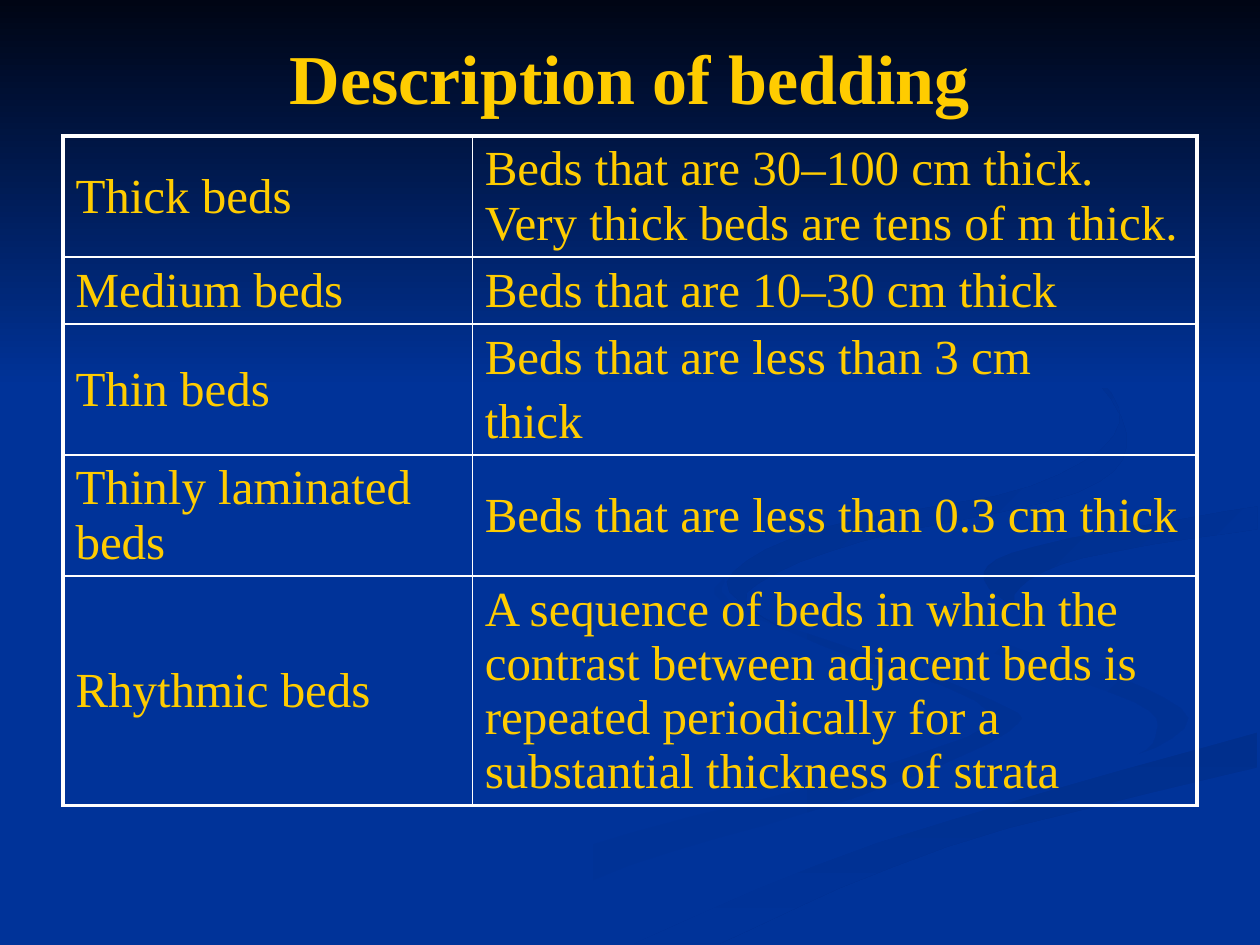
from lxml.etree import SubElement
from pptx import Presentation
from pptx.dml.color import RGBColor
from pptx.enum.shapes import MSO_SHAPE
from pptx.enum.text import MSO_ANCHOR, PP_ALIGN
from pptx.oxml.ns import qn
from pptx.util import Cm, Pt

BLUE = RGBColor(0x00, 0x33, 0x99)
NIGHT = RGBColor(0x00, 0x05, 0x14)
DEEP = RGBColor(0x00, 0x2F, 0x8D)
SHADE = RGBColor(0x00, 0x31, 0x93)
GOLD = RGBColor(0xFF, 0xCC, 0x00)
WHITE = RGBColor(0xFF, 0xFF, 0xFF)
FONT = "Times New Roman"
UNIT = Cm(0.0254)  # grid step of the ribbon edges
STEPS = 5  # line pieces between two points of an edge

# Ribbons, back to front: first colour, last colour, angle, curved edges
RIBBONS = [
    (BLUE, SHADE, 0, [
        [(300, 749), (458, 674), (684, 613), (786, 566), (654, 513),
         (572, 476), (575, 459)],
        [(575, 459), (594, 485), (781, 553), (800, 581), (676, 634),
         (499, 687), (361, 749)]]),
    (BLUE, SHADE, 45, [
        [(724, 464), (755, 505), (900, 557), (917, 585), (894, 605)],
        [(894, 605), (943, 570), (870, 530), (758, 498), (724, 464)]]),
    (DEEP, BLUE, 90, [
        [(503, 749), (696, 669), (998, 581)],
        [(998, 609), (752, 672), (571, 749)]]),
    (BLUE, BLUE, 0, [
        [(477, 749), (704, 655), (936, 587), (931, 553), (793, 509),
         (725, 464), (770, 427), (999, 387)],
        [(999, 402), (835, 430), (784, 469), (848, 503), (999, 538)],
        [(999, 581), (696, 669), (503, 749)]]),
    (DEEP, BLUE, 45, [
        [(998, 402), (821, 434), (781, 460), (826, 496)],
        [(826, 496), (805, 472), (859, 443), (998, 420)]]),
    (DEEP, BLUE, 45, [
        [(762, 233), (846, 279), (889, 335), (818, 386), (649, 420),
         (577, 462), (622, 500)],
        [(622, 500), (593, 470), (683, 430), (855, 391), (894, 344),
         (843, 275), (762, 233)]]),
]

ROWS = [  # height in cm, term, paragraphs of the description
    (2.44, "Thick beds",
     ["Beds that are 30–100 cm thick. Very thick beds are tens of m thick."]),
    (1.35, "Medium beds", ["Beds that are 10–30 cm thick"]),
    (2.64, "Thin beds", ["Beds that are less than 3 cm", "thick"]),
    (2.44, "Thinly laminated beds", ["Beds that are less than 0.3 cm thick"]),
    (4.62, "Rhythmic beds",
     ["A sequence of beds in which the contrast between adjacent beds is "
      "repeated periodically for a substantial thickness of strata"]),
]


def smooth(edge):
    """Points of a Catmull-Rom curve through the points of an edge."""
    knots = [edge[0], *edge, edge[-1]]
    curve = []
    for quad in zip(knots, knots[1:], knots[2:], knots[3:]):
        for step in range(STEPS):
            t = step / STEPS
            curve.append(tuple(
                b + t * (c - a + t * (2 * a - 5 * b + 4 * c - d
                                      + t * (3 * b - a - 3 * c + d))) / 2
                for a, b, c, d in zip(*quad)))
    return curve + [edge[-1]]


def format_font(font, size, bold=False):
    values = {"name": FONT, "size": Pt(size), "bold": bold}
    for name, value in values.items():
        setattr(font, name, value)
    font.color.rgb = GOLD


def paint(sp, first, last, angle):
    sp.shadow.inherit = False
    sp.line.fill.background()
    if first == last:
        sp.fill.solid()
        sp.fill.fore_color.rgb = first
        return
    sp.fill.gradient()
    sp.fill.gradient_angle = -angle % 360
    for stop, color in zip(sp.fill.gradient_stops, (first, last)):
        stop.color.rgb = color


def add_backdrop(s, left, top, width, height):
    s.background.fill.solid()
    s.background.fill.fore_color.rgb = BLUE
    # Swirling ribbons
    for first, last, angle, edges in RIBBONS:
        points = [point for edge in edges for point in smooth(edge)]
        builder = s.shapes.build_freeform(*points[0], scale=UNIT)
        builder.add_line_segments(points[1:], close=True)
        paint(builder.convert_to_shape(left, top), first, last, angle)
    # Dark fade at the top
    fade = s.shapes.add_shape(MSO_SHAPE.RECTANGLE, left, top, width, height)
    paint(fade, NIGHT, BLUE, 90)


def add_title(s, left, top, width, height):
    sp = s.shapes.title
    box = {"left": left, "top": top, "width": width, "height": height}
    for name, value in box.items():
        setattr(sp, name, value)
    tf = sp.text_frame
    tf.vertical_anchor = MSO_ANCHOR.MIDDLE
    p = tf.paragraphs[0]
    p.alignment = PP_ALIGN.CENTER
    r = p.add_run()
    r.text = "Description of bedding"
    format_font(r.font, 40, bold=True)
    s.shapes._spTree.append(sp._element)  # in front of the backdrop


def set_borders(cell, widths):
    tcPr = cell._tc.get_or_add_tcPr()
    for i, (side, width) in enumerate(widths.items()):
        ln = SubElement(tcPr, qn("a:ln" + side), w=str(Pt(width)))
        fill = SubElement(ln, qn("a:solidFill"))
        SubElement(fill, qn("a:srgbClr"), val=str(WHITE))
        tcPr.insert(i, ln)


def fill_cell(cell, paragraphs):
    cell.fill.background()
    cell.vertical_anchor = MSO_ANCHOR.MIDDLE
    tf = cell.text_frame
    for i, text in enumerate(paragraphs):
        p = tf.add_paragraph() if i else tf.paragraphs[0]
        p.space_before = Pt(5.6)
        r = p.add_run()
        r.text = text
        format_font(r.font, 28)


def add_bed_table(s, left, top, width, height):
    last = len(ROWS) - 1
    table = s.shapes.add_table(len(ROWS), 2, left, top, width, height).table
    table.first_row = table.horz_banding = False
    table.columns[0].width = Cm(8.25)
    table.columns[1].width = width - Cm(8.25)
    for i, (row_height, term, description) in enumerate(ROWS):
        table.rows[i].height = Cm(row_height)
        for j, paragraphs in enumerate(([term], description)):
            cell = table.cell(i, j)
            fill_cell(cell, paragraphs)
            # Thick frame outside, thin lines inside
            outer = {"L": j == 0, "R": j == 1, "T": i == 0, "B": i == last}
            set_borders(cell, {k: 2.25 if v else 1 for k, v in outer.items()})
    table.cell(last, 1).margin_right = 0


def main():
    prs = Presentation()
    prs.slide_width, prs.slide_height = Cm(25.4), Cm(19.05)
    s = prs.slides.add_slide(prs.slide_layouts[5])
    add_backdrop(s, 0, 0, prs.slide_width, Cm(7.82))
    add_title(s, Cm(1.27), Cm(0.76), Cm(22.86), Cm(1.57))
    add_bed_table(s, Cm(1.27), Cm(2.74), Cm(22.86), Cm(13.49))
    prs.save("out.pptx")


if __name__ == "__main__":
    main()
